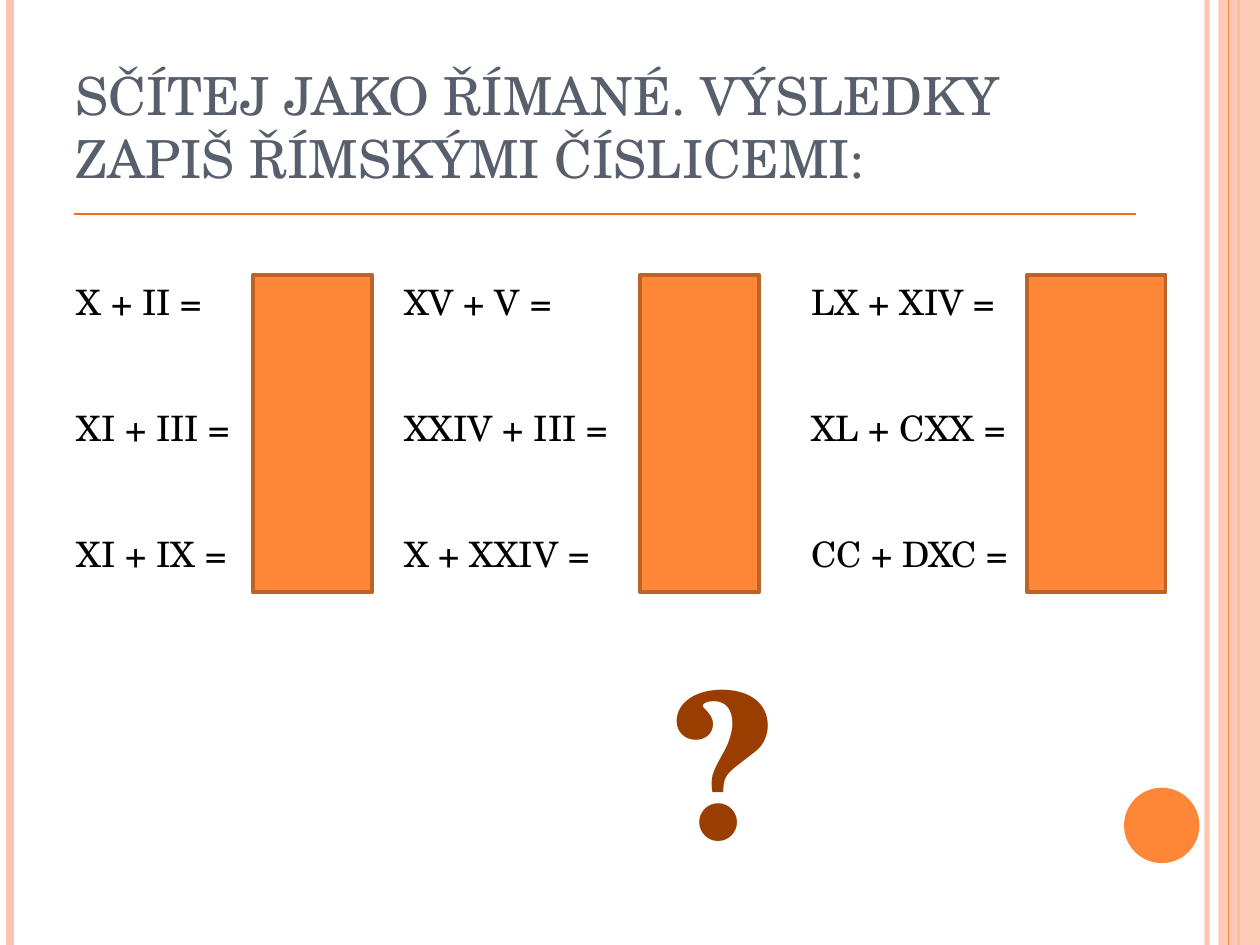
from lxml import etree
from pptx import Presentation
from pptx.dml.color import RGBColor
from pptx.enum.shapes import MSO_CONNECTOR, MSO_SHAPE
from pptx.enum.text import MSO_ANCHOR, MSO_AUTO_SIZE, PP_ALIGN
from pptx.oxml.ns import qn
from pptx.util import Cm, Pt

STRAIGHT = MSO_CONNECTOR.STRAIGHT
RECT, OVAL = MSO_SHAPE.RECTANGLE, MSO_SHAPE.OVAL
BOTTOM, TOP, LEFT = MSO_ANCHOR.BOTTOM, MSO_ANCHOR.TOP, PP_ALIGN.LEFT
NO_FIT = MSO_AUTO_SIZE.NONE
FONT = "TeX Gyre Schola"
COLORS = {
    "title": "575F6D", "text": "000000", "orange": "FE8637", "pink": "FEC3AE",
    "rule": "FF6B0A", "border": "BC6329", "brown": "9A3D01",
}
WIDTH, HEIGHT = 25.4, 19.05
ROW_TOP = 5.54
COLUMNS = [
    (1.3, 5.4, 5.1, 2.4, ["X + II =", "XI + III =", "XI + IX ="]),
    (7.9, 5, 12.9, 2.4, ["XV + V =", "XXIV + III =", "X + XXIV ="]),
    (16.1, 5.4, 20.7, 2.8, ["LX + XIV =", "XL + CXX =", "CC + DXC ="]),
]


def rgb(name):
    """Return the named colour."""
    return RGBColor.from_string(COLORS[name])


def set_alpha(fill, percent):
    """Set the opacity of a solid fill."""
    color = fill._xPr.find(qn("a:solidFill"))[0]
    etree.SubElement(color, qn("a:alpha")).set("val", str(percent * 1000))


def write(sp, lines, size=20, color="text", bold=False, anchor=TOP, gap=0):
    """Write formatted paragraphs into a shape."""
    tf = sp.text_frame
    tf.word_wrap, tf.auto_size, tf.vertical_anchor = True, NO_FIT, anchor
    for i, line in enumerate(lines):
        p = tf.add_paragraph() if i else tf.paragraphs[0]
        p.alignment = LEFT
        p.space_before = Pt(gap if i else 0)
        r = p.add_run()
        r.text = line
        r.font.name, r.font.size, r.font.bold = FONT, Pt(size), bold
        r.font.color.rgb = rgb(color)


def add_text(slide, left, top, width, height, lines, **fmt):
    """Add a text box."""
    sp = slide.shapes.add_textbox(Cm(left), Cm(top), Cm(width), Cm(height))
    write(sp, lines, **fmt)


def add_line(slide, x1, y1, x2, y2, color, weight, alpha=100):
    """Add a straight line."""
    line = slide.shapes.add_connector(STRAIGHT, Cm(x1), Cm(y1), Cm(x2), Cm(y2))
    line.line.color.rgb = rgb(color)
    line.line.width = Pt(weight)
    if alpha < 100:
        set_alpha(line.line.fill, alpha)
    etree.SubElement(line._element.spPr, qn("a:effectLst"))


def add_block(slide, kind, left, top, width, height, color, border=None, alpha=100):
    """Add a filled shape with an optional border."""
    sp = slide.shapes.add_shape(kind, Cm(left), Cm(top), Cm(width), Cm(height))
    sp.shadow.inherit = False
    sp.fill.solid()
    sp.fill.fore_color.rgb = rgb(color)
    if alpha < 100:
        set_alpha(sp.fill, alpha)
    if border:
        sp.line.color.rgb = rgb(border)
        sp.line.width = Pt(2)
    else:
        sp.line.fill.background()


def add_frame(slide):
    """Draw the side stripes and the circle."""
    add_line(slide, 24.33, 0, 24.33, HEIGHT, "pink", 3, alpha=93)
    add_line(slide, 0.21, 0, 0.21, HEIGHT, "pink", 4.5)
    add_line(slide, 24.97, 0, 24.97, HEIGHT, "orange", 1.5)
    add_block(slide, RECT, 24.56, 0, 0.84, HEIGHT, "pink", alpha=87)
    add_line(slide, 24.77, 0, 24.77, HEIGHT, "orange", 0.75)
    add_block(slide, OVAL, 22.66, 15.88, 1.52, 1.52, "orange")


def add_title(slide, text):
    """Place the title and the rule below it."""
    sp = slide.shapes.title
    sp.left, sp.top, sp.width, sp.height = Cm(1.27), Cm(0.76), Cm(20.75), Cm(3.18)
    write(sp, [text], size=30, color="title", anchor=BOTTOM)
    add_line(slide, 1.5, 4.32, 22.9, 4.32, "rule", 1)


def main():
    """Build the slide."""
    prs = Presentation()
    prs.slide_width, prs.slide_height = Cm(WIDTH), Cm(HEIGHT)
    slide = prs.slides.add_slide(prs.slide_layouts[5])
    add_frame(slide)
    add_title(slide, "SČÍTEJ JAKO ŘÍMANÉ. VÝSLEDKY ZAPIŠ ŘÍMSKÝMI ČÍSLICEMI:")
    for left, width, cover_left, cover_width, sums in COLUMNS:
        add_text(slide, left, ROW_TOP, width, 6.25, sums, gap=48)
        add_block(slide, RECT, cover_left, ROW_TOP, cover_width, 6.4, "orange", "border")
    add_text(slide, 13.3, 12.73, 3.2, 5.18, ["?"], size=115, color="brown", bold=True)
    prs.save("out.pptx")


if __name__ == "__main__":
    main()
